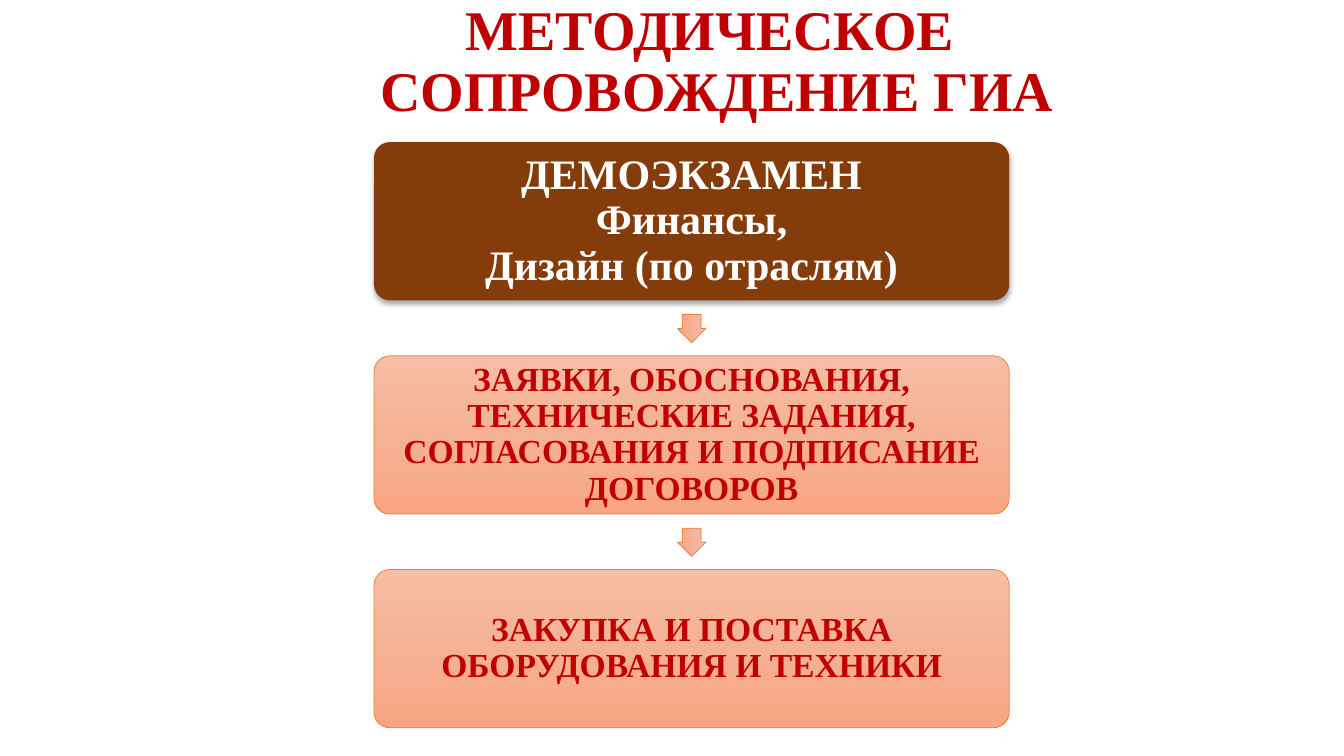
from copy import deepcopy
from dataclasses import dataclass

from lxml.etree import SubElement
from pptx import Presentation
from pptx.dml.color import RGBColor
from pptx.enum.shapes import MSO_SHAPE
from pptx.enum.text import MSO_ANCHOR, MSO_AUTO_SIZE, PP_ALIGN
from pptx.oxml.ns import qn
from pptx.util import Pt

EMU_PER_PX = 9144


def px(length):
    return length * EMU_PER_PX


@dataclass(frozen=True)
class Theme:
    font: str = "Times New Roman"
    red: str = "C00000"
    white: str = "FFFFFF"
    brown: str = "843C0B"
    outline: str = "ED7D31"
    shadow: str = "000000"
    peach: tuple = ((0, "F7BDA5"), (0.5, "F5B196"), (1, "F8A582"))
    title_size: int = 40
    lead_size: int = 30
    step_size: int = 24


class SlideBuilder:
    def __init__(self, slide, theme):
        self.slide = slide
        self.theme = theme

    def set_wording(self, frame, wording, size, color):
        frame.text = wording
        frame.word_wrap = True
        frame.auto_size = MSO_AUTO_SIZE.NONE
        frame.vertical_anchor = MSO_ANCHOR.MIDDLE
        for paragraph in frame.paragraphs:
            paragraph.alignment = PP_ALIGN.CENTER
            paragraph.line_spacing = 0.9
            for run in paragraph.runs:
                run.font.name = self.theme.font
                run.font.size = Pt(size)
                run.font.bold = True
                run.font.color.rgb = RGBColor.from_string(color)

    def title(self, wording, left, top, width, height):
        heading = self.slide.shapes.title
        heading.left, heading.top = px(left), px(top)
        heading.width, heading.height = px(width), px(height)
        self.set_wording(heading.text_frame, wording, self.theme.title_size, self.theme.red)

    def shape(self, kind, left, top, width, height, adjustments):
        added = self.slide.shapes.add_shape(kind, px(left), px(top), px(width), px(height))
        added.shadow.inherit = False
        for index, value in enumerate(adjustments):
            added.adjustments[index] = value
        return added

    def paint_peach(self, shape):
        shape.fill.gradient()
        shape.fill.gradient_angle = 270
        first_stop = shape.fill.gradient_stops[0]._gs
        first_stop.addnext(deepcopy(first_stop))
        for stop, (position, color) in zip(shape.fill.gradient_stops, self.theme.peach):
            stop.position = position
            stop.color.rgb = RGBColor.from_string(color)
        shape.line.color.rgb = RGBColor.from_string(self.theme.outline)
        shape.line.width = Pt(0.5)

    def cast_shadow(self, shape):
        effects = shape._element.spPr.find(qn("a:effectLst"))
        outer = SubElement(effects, qn("a:outerShdw"), blurRad=str(Pt(3.5)),
                           dist=str(Pt(2.2)), dir="5400000", rotWithShape="0")
        color = SubElement(outer, qn("a:srgbClr"), val=self.theme.shadow)
        SubElement(color, qn("a:alpha"), val="32000")

    def card(self, wording, left, top, width, height, lead):
        card = self.shape(MSO_SHAPE.ROUNDED_RECTANGLE, left, top, width, height, [0.1])
        frame = card.text_frame
        frame.margin_left = frame.margin_right = px(8)
        frame.margin_top = frame.margin_bottom = px(8)
        if lead:
            card.fill.solid()
            card.fill.fore_color.rgb = RGBColor.from_string(self.theme.brown)
            card.line.fill.background()
            self.cast_shadow(card)
            self.set_wording(frame, wording, self.theme.lead_size, self.theme.white)
        else:
            self.paint_peach(card)
            self.set_wording(frame, wording, self.theme.step_size, self.theme.red)

    def down_arrow(self, left, top, side):
        arrow = self.shape(MSO_SHAPE.RIGHT_ARROW, left, top, side, side, [0.667, 0.5])
        arrow.rotation = 90
        self.paint_peach(arrow)


STEPS = [
    "ДЕМОЭКЗАМЕН\vФинансы,\vДизайн (по отраслям)",
    "ЗАЯВКИ, ОБОСНОВАНИЯ, ТЕХНИЧЕСКИЕ ЗАДАНИЯ, СОГЛАСОВАНИЯ И ПОДПИСАНИЕ ДОГОВОРОВ",
    "ЗАКУПКА И ПОСТАВКА ОБОРУДОВАНИЯ И ТЕХНИКИ",
]
CARD_LEFT, CARD_TOP, CARD_WIDTH, CARD_HEIGHT = 371, 141, 630, 157
GAP, ARROW_SIDE = 55, 28


def main():
    presentation = Presentation()
    presentation.slide_width, presentation.slide_height = px(1333), px(750)
    slide = presentation.slides.add_slide(presentation.slide_layouts[5])
    builder = SlideBuilder(slide, Theme())
    builder.title("МЕТОДИЧЕСКОЕ \nСОПРОВОЖДЕНИЕ ГИА", 111, 0, 1200, 125)
    for index, step in enumerate(STEPS):
        top = CARD_TOP + index * (CARD_HEIGHT + GAP)
        if index:
            builder.down_arrow(CARD_LEFT + (CARD_WIDTH - ARROW_SIDE) // 2,
                               top - (GAP + ARROW_SIDE) // 2, ARROW_SIDE)
        builder.card(step, CARD_LEFT, top, CARD_WIDTH, CARD_HEIGHT, lead=index == 0)
    presentation.save("out.pptx")


if __name__ == "__main__":
    main()
